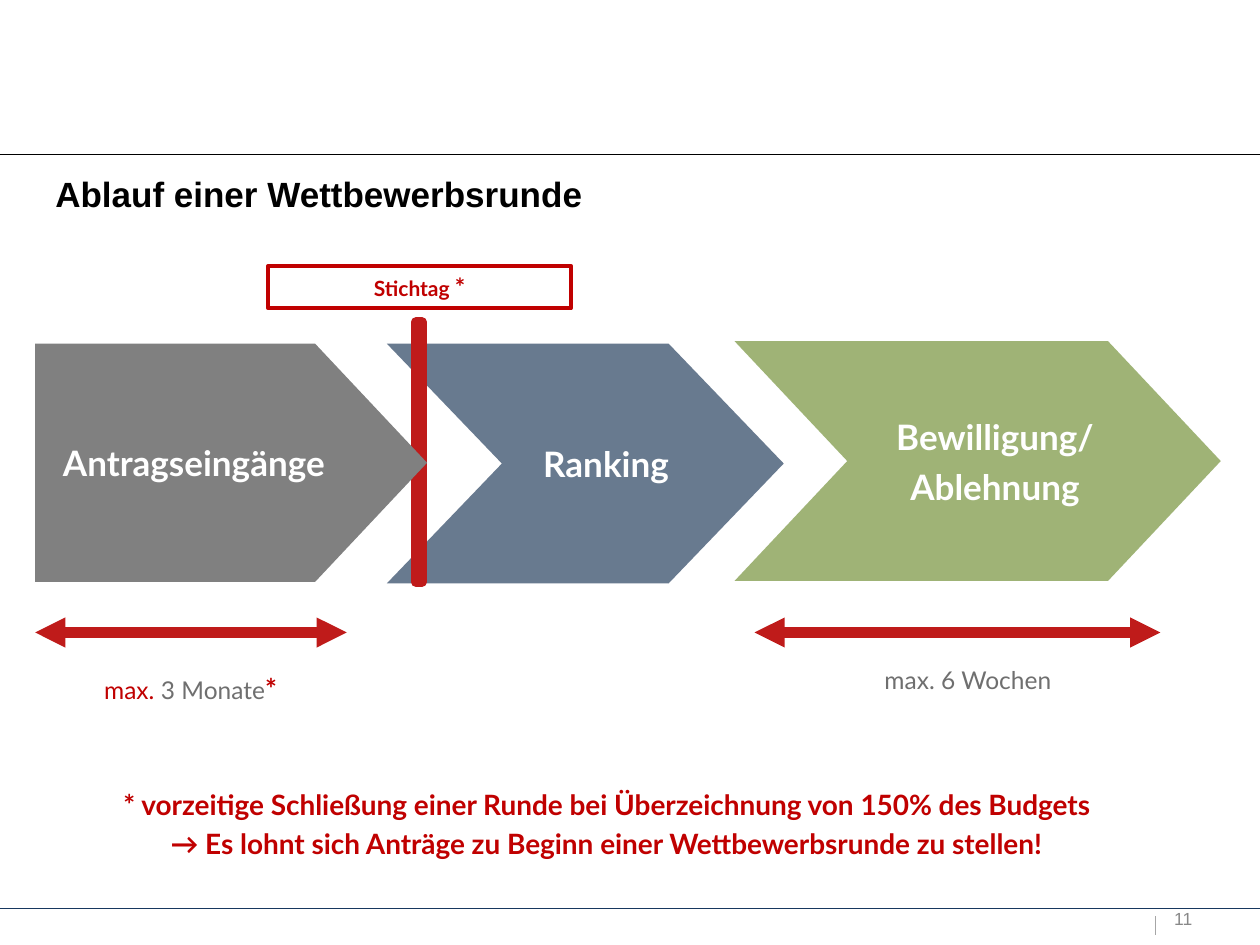
from lxml import etree
from pptx import Presentation
from pptx import util as u
from pptx.dml.color import RGBColor
from pptx.enum import shapes, text
from pptx.oxml import ns

COLORS = {
    "black": "000000", "white": "FFFFFF", "navy": "17375E", "rule": "A6A6A6",
    "number": "888888", "grey": "808080", "label": "6F6F6F", "blue": "142F51",
    "green": "77933C", "red": "C00000", "signal": "BF1B1A",
}
SHAPE = shapes.MSO_SHAPE
ALIGN = text.PP_ALIGN
ANCHOR = text.MSO_ANCHOR


def rgb(name):
    return RGBColor.from_string(COLORS[name])


def cm(*lengths):
    return [u.Cm(length) for length in lengths]


def set_text(shape, lines, align=ALIGN.LEFT, gap=0, **frame_format):
    """Fill a shape with lines, each a list of (words, size, colour, bold) spans."""
    frame = shape.text_frame
    for name, value in frame_format.items():
        setattr(frame, name, value)
    for index, spans in enumerate(lines):
        para = frame.add_paragraph() if index else frame.paragraphs[0]
        para.alignment = align
        if index:
            para.space_before = u.Pt(gap)
        for words, size, color, bold in spans:
            span = para.add_run()
            span.text = words
            font_format = {"name": "Lato", "size": u.Pt(size), "bold": bold}
            for name, value in font_format.items():
                setattr(span.font, name, value)
            span.font.color.rgb = rgb(color)
    return frame


def add_line(page, start, end, color, width, arrows=False):
    line = page.shapes.add_connector(
        shapes.MSO_CONNECTOR.STRAIGHT, *cm(*start, *end))
    line.line.color.rgb = rgb(color)
    line.line.width = u.Pt(width)
    if arrows:
        outline = line.line._get_or_add_ln()
        for tag in ("a:headEnd", "a:tailEnd"):
            etree.SubElement(outline, ns.qn(tag)).set("type", "triangle")
    etree.SubElement(line._element.spPr, ns.qn("a:effectLst"))


def add_form(page, kind, box, fill=None, line=None, width=0, opacity=100):
    form = page.shapes.add_shape(kind, *cm(*box))
    form.shadow.inherit = False
    if fill:
        form.fill.solid()
        form.fill.fore_color.rgb = rgb(fill)
    else:
        form.fill.background()
    if opacity < 100:
        color = form._element.spPr.find(".//" + ns.qn("a:srgbClr"))
        etree.SubElement(color, ns.qn("a:alpha")).set("val", str(opacity * 1000))
    if line:
        form.line.color.rgb = rgb(line)
        form.line.width = u.Pt(width)
    else:
        form.line.fill.background()
    return form


def add_label(page, box, lines, **options):
    label = page.shapes.add_textbox(*cm(*box))
    return set_text(label, lines, word_wrap=False, **options)


def add_frame(page, box):
    left, top, width, height = box
    for y, color in ((top, "black"), (top + height, "navy")):
        add_line(page, (left, y), (left + width, y), color, 0.75)
    bottom = top + height
    divider = left + width - 2.11
    add_line(page, (divider, bottom + 0.16), (divider, bottom + 0.54), "rule", 0.75)
    frame = add_label(page, (divider + 0.38, bottom, 1.63, 0.43),
                      [[("11", 10, "number", False)]],
                      margin_left=0, margin_right=0, margin_top=0, margin_bottom=0)
    frame.paragraphs[0].runs[0].font.name = "Arial"


def add_title(page, box):
    title = page.shapes.title
    title.left, title.top, title.width, title.height = cm(*box)
    frame = set_text(title, [[("Ablauf einer Wettbewerbsrunde", 20, "black", True)]],
                     vertical_anchor=ANCHOR.TOP, auto_size=text.MSO_AUTO_SIZE.NONE)
    frame.paragraphs[0].runs[0].font.name = "Arial"


def add_step(page, kind, box, point, fill, opacity, words, align, indent, wrap):
    step = add_form(page, kind, box, fill, opacity=opacity)
    step.adjustments[0] = point
    set_text(step, [[(line, 20, "white", True)] for line in words], align, gap=4.5,
             vertical_anchor=ANCHOR.MIDDLE, word_wrap=wrap, margin_left=u.Cm(indent),
             margin_right=0, margin_top=0, margin_bottom=0)


def add_process(page, box):
    """Place the three steps and the cut-off bar with its caption."""
    left, top, width, height = box
    add_step(page, SHAPE.CHEVRON, (left + 14.1, top, width - 14.1, height), 0.47,
             "green", 70, ["Bewilligung/", "Ablehnung"], ALIGN.CENTER, 0.7, False)
    add_step(page, SHAPE.CHEVRON, (left + 7.09, top + 0.05, 8, height), 0.48,
             "blue", 64, ["Ranking"], ALIGN.CENTER, 0.84, False)
    caption = add_form(page, SHAPE.RECTANGLE, (left + 4.7, top - 1.52, 6.1, 0.86),
                       line="red", width=2.25)
    set_text(caption, [[("Stichtag ", 12, "red", True), ("*", 14, "red", True)]],
             ALIGN.CENTER)
    add_form(page, SHAPE.RECTANGLE, (left + 7.67, top - 0.38, 0.13, 5.23),
             "signal", "signal", 5.75)
    add_step(page, SHAPE.PENTAGON, (left, top + 0.05, 7.9, height - 0.03), 0.47,
             "grey", 100, ["Antragseingänge"], ALIGN.LEFT, 0.56, True)


def add_duration(page, box, label_box, spans):
    """Draw a double arrow along the top of box and its label inside."""
    left, top, width = box
    add_line(page, (left, top), (left + width, top), "signal", 5.75, arrows=True)
    dx, dy, label_width, label_height = label_box
    add_label(page, (left + dx, top + dy, label_width, label_height), [spans])


def add_footnote(page, box):
    lines = ("* vorzeitige Schließung einer Runde bei Überzeichnung von 150% des Budgets",
             "→ Es lohnt sich Anträge zu Beginn einer Wettbewerbsrunde zu stellen!")
    frame = add_label(page, box, [[(line, 16, "red", True)] for line in lines], gap=3.2)
    frame.paragraphs[1]._p.get_or_add_pPr().set("marL", str(u.Cm(0.95)))


def main():
    deck = Presentation()
    deck.slide_width, deck.slide_height = cm(25.4, 19.05)
    page = deck.slides.add_slide(deck.slide_layouts[5])
    add_frame(page, (0, 3.12, 25.4, 15.19))
    add_title(page, (0.86, 3.35, 11.15, 1.37))
    add_process(page, (0.71, 6.88, 23.9, 4.83))
    add_duration(page, (0.71, 12.75, 6.28), (1.14, 0.66, 4.01, 0.94),
                 [("max. ", 14, "red", False), ("3 Monate", 14, "label", False),
                  ("*", 16, "red", True)])
    add_duration(page, (15.21, 12.75, 8.18), (2.37, 0.53, 3.96, 0.86),
                 [("max. 6 Wochen", 14, "label", False)])
    add_footnote(page, (2.24, 15.75, 21.84, 1.75))
    deck.save("out.pptx")


if __name__ == "__main__":
    main()
